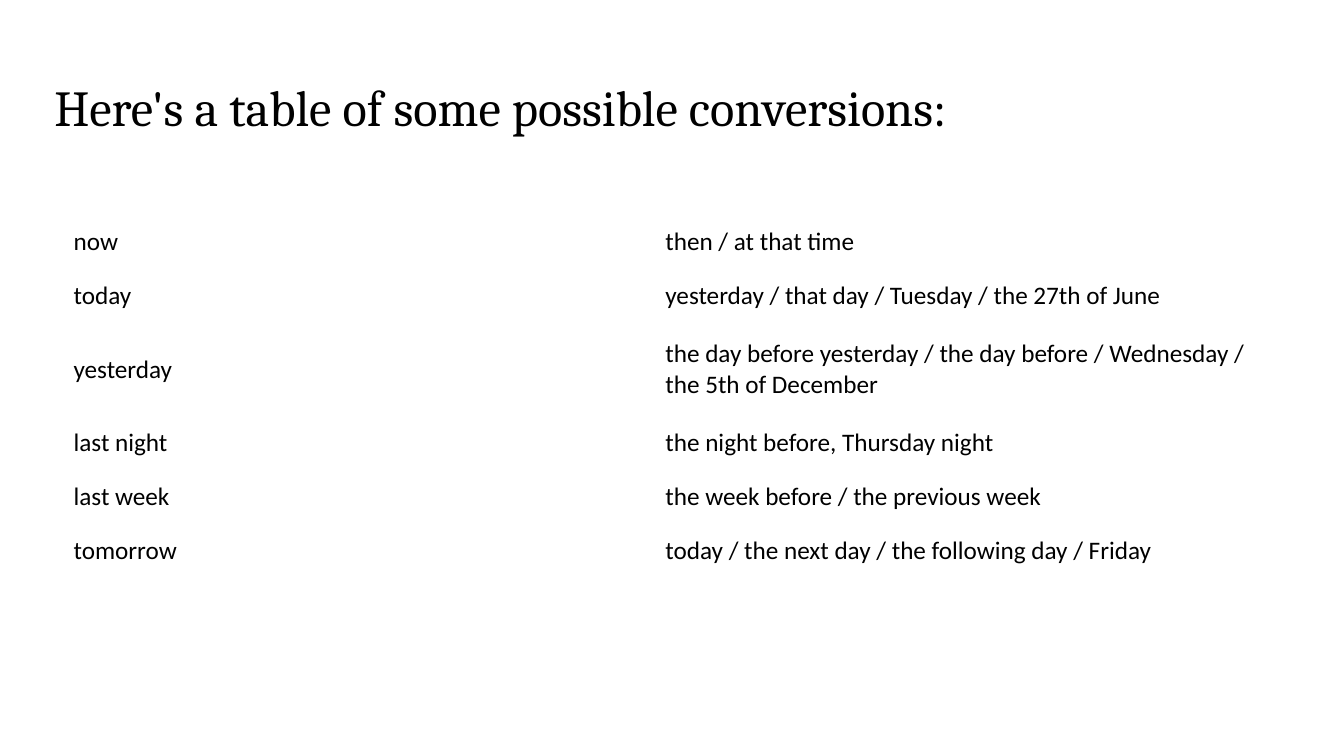
from pptx import Presentation
from pptx.dml.color import RGBColor
from pptx.enum.text import MSO_ANCHOR, PP_ALIGN
from pptx.util import Inches, Pt

TITLE = "Here's a table of some possible conversions:"
CONVERSIONS = [
    ("now", "then / at that time"),
    ("today", "yesterday / that day / Tuesday / the 27th of June"),
    ("yesterday", "the day before yesterday / the day before / Wednesday / the 5th of December"),
    ("last night", "the night before, Thursday night"),
    ("last week", "the week before / the previous week"),
    ("tomorrow", "today / the next day / the following day / Friday"),
]
BLACK = RGBColor(0, 0, 0)
ROW_HEIGHT, TALL_ROW_HEIGHT = 0.535, 0.93
COLUMN_WIDTH = 5.87
CELL_MARGIN = Inches(0.05)
WRAP_LENGTH = 60  # longer entries take two lines


def style_paragraph(para, font_name, size):
    para.alignment = PP_ALIGN.LEFT
    para.font.name = font_name
    para.font.size = Pt(size)
    para.font.color.rgb = BLACK


deck = Presentation()
deck.slide_width, deck.slide_height = Inches(13.33), Inches(7.5)
page = deck.slides.add_slide(deck.slide_layouts[5])

# Title
title = page.shapes.title
title.left, title.top = Inches(0.44), Inches(0.68)
title.width, title.height = Inches(10.92), Inches(1.31)
title.text_frame.text = TITLE
title.text_frame.vertical_anchor = MSO_ANCHOR.TOP
title.text_frame.margin_top = Inches(0.08)
style_paragraph(title.text_frame.paragraphs[0], "Cambria", 36)

# Conversion table
heights = [TALL_ROW_HEIGHT if len(reported) > WRAP_LENGTH else ROW_HEIGHT
           for _, reported in CONVERSIONS]
table = page.shapes.add_table(
    len(CONVERSIONS), 2, Inches(0.68), Inches(2.13),
    Inches(2 * COLUMN_WIDTH), Inches(sum(heights))).table
table.first_row = table.horz_banding = False
for column in table.columns:
    column.width = Inches(COLUMN_WIDTH)

for row, height, entries in zip(table.rows, heights, CONVERSIONS):
    row.height = Inches(height)
    for cell, entry in zip(row.cells, entries):
        cell.text = entry
        cell.fill.background()
        cell.vertical_anchor = MSO_ANCHOR.MIDDLE
        cell.margin_left = cell.margin_right = CELL_MARGIN
        cell.margin_top = cell.margin_bottom = CELL_MARGIN
        style_paragraph(cell.text_frame.paragraphs[0], "Calibri", 18)

deck.save("out.pptx")
